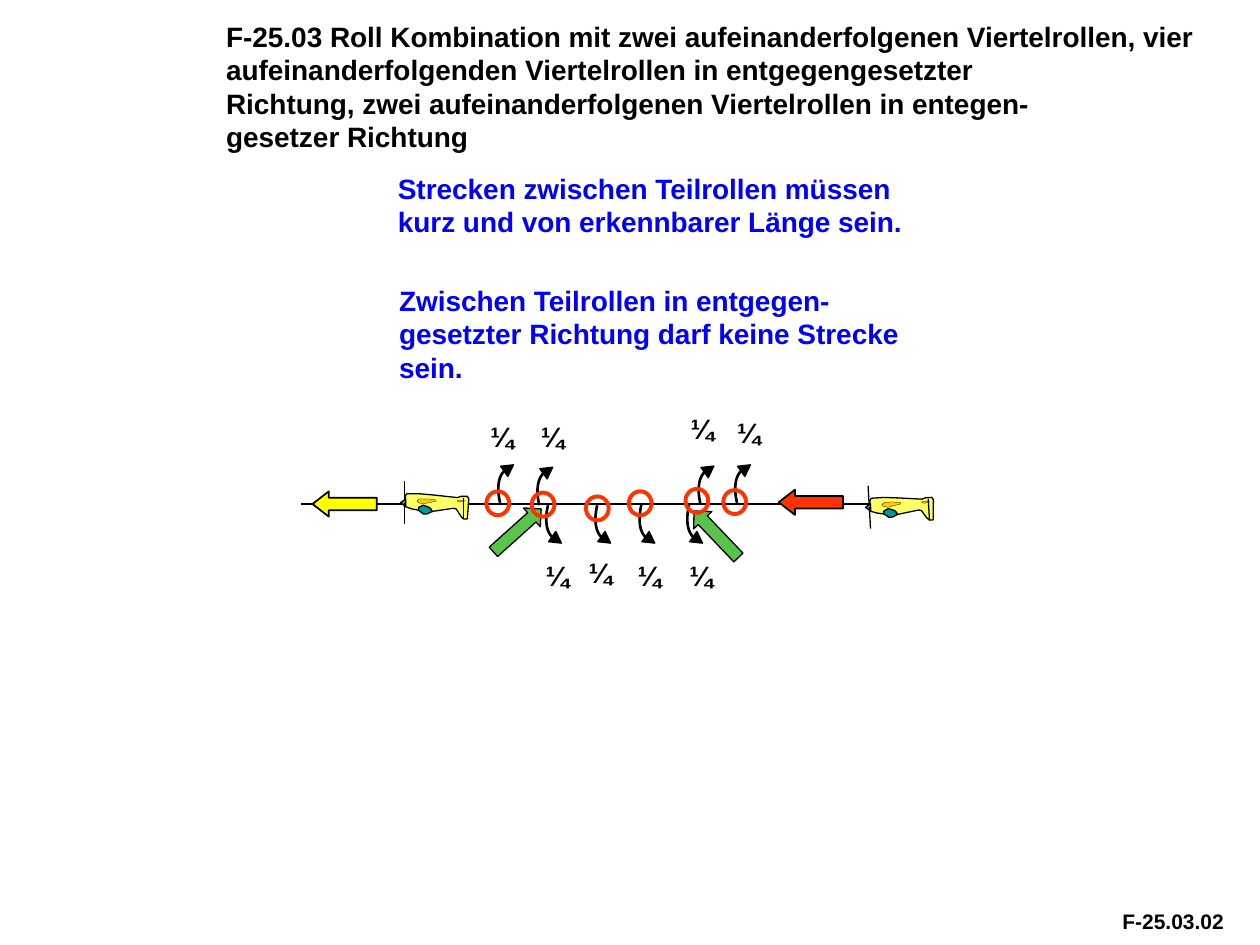
from math import cos, radians, sin

from lxml import etree
from pptx import Presentation
from pptx.dml.color import RGBColor
from pptx.enum.shapes import MSO_CONNECTOR, MSO_SHAPE
from pptx.enum.text import MSO_ANCHOR, MSO_AUTO_SIZE, PP_ALIGN
from pptx.oxml.ns import qn
from pptx.util import Pt

STRAIGHT = MSO_CONNECTOR.STRAIGHT
ARROW, OVAL, TRIANGLE = MSO_SHAPE.RIGHT_ARROW, MSO_SHAPE.OVAL, MSO_SHAPE.ISOSCELES_TRIANGLE
LEFT, CENTER = PP_ALIGN.LEFT, PP_ALIGN.CENTER
TOP = MSO_ANCHOR.TOP
NO_AUTOSIZE = MSO_AUTO_SIZE.NONE

COLORS = {
    "black": "000000", "blue": "0000FF", "red": "FF3300", "yellow": "FFFF00",
    "green": "59C34B", "gray": "808080", "fuselage": "FFFF66",
    "wing": "009999", "canopy": "FFCC00",
}

# Aircraft parts, measured from the middle of the fuselage
FUSELAGE = [
    (-10.4, 2.9), (-14, 2.2), (-18.4, 0.7), (-18.4, -2.2), (-17.6, -5.8),
    (-16.9, -6.5), (-9.7, -6.5), (-1.8, -5.8), (11.9, -4.3), (14, -5),
    (17.6, -5), (18.4, -3.6), (17.6, 7.9), (15.5, 7.9), (14, 6.5),
    (11.2, 2.2), (9.7, 1.8), (-2.5, 3.6), (-3.2, 2.2), (-7.6, 0.7), (-9.7, 1.4),
]
WING = [(-2.5, 3.6), (-4, 1.4), (-7.6, 0), (-10.4, 1.4), (-10.4, 2.9), (-7.6, 5), (-5.4, 5)]
CANOPY = [(-0.4, -2.9), (-0.4, -2.2), (-4.7, -1.4), (-7.6, -0.7), (-10.4, -1.4),
          (-11.2, -2.5), (-9.7, -3.6), (-4.7, -3.6)]
TAILPLANE = [(16.2, -2.5), (14, -2.9), (11.9, -2.9), (11.9, -2.2), (13.3, -1.8)]
UPPER_BLADE = [(-18.4, -13.7), (-18.4, -2.2)]
LOWER_BLADE = [(-18.4, -1.4), (-18.4, 10.8)]
RUDDER_HINGE = [(15.5, -4.3), (15.5, 7.9)]
SPINNER = (-19.1, -1.4)

# Roll arrow: start, two control points and end of the curve
ROLL_CURVE = [(0, 0), (-2.2, 9.4), (-0.7, 15.8), (2.9, 18.7)]
ROLL_HEAD = (5, 19.8)


class Figure:
    font = "Arial"

    def __init__(self, slide):
        self.slide = slide
        self.shapes = slide.shapes

    def color(self, name):
        return RGBColor.from_string(COLORS[name])

    def paint(self, shape, fill, line="black", width=0.75):
        shape.shadow.inherit = False
        if fill:
            shape.fill.solid()
            shape.fill.fore_color.rgb = self.color(fill)
        else:
            shape.fill.background()
        shape.line.color.rgb = self.color(line)
        shape.line.width = Pt(width)

    def fill_frame(self, frame, text, size, color, align):
        frame.word_wrap = True
        frame.auto_size = NO_AUTOSIZE
        frame.vertical_anchor = TOP
        frame.text = text
        paragraph = frame.paragraphs[0]
        paragraph.alignment = align
        font = paragraph.font
        font.name, font.size, font.bold = self.font, Pt(size), True
        font.color.rgb = self.color(color)

    def title(self, lines, left, top, width, height, indent):
        title = self.shapes.title
        title.left, title.top, title.width, title.height = map(Pt, (left, top, width, height))
        frame = title.text_frame
        self.fill_frame(frame, "\v".join(lines), 16, "black", LEFT)
        frame.margin_left, frame.margin_right = Pt(indent), Pt(6.5)
        frame.margin_top = frame.margin_bottom = Pt(3)

    def text(self, text, left, top, width, height, size=16, color="black", align=LEFT):
        box = self.shapes.add_textbox(Pt(left), Pt(top), Pt(width), Pt(height))
        self.fill_frame(box.text_frame, text, size, color, align)

    def line(self, start, end):
        line = self.shapes.add_connector(STRAIGHT, *map(Pt, (*start, *end)))
        line.line.color.rgb = self.color("black")
        line.line.width = Pt(0.75)
        etree.SubElement(line._element.spPr, qn("a:effectLst"))

    def preset(self, kind, center, width, height, fill, rotation=0, line="black", weight=0.75):
        x, y = center
        shape = self.shapes.add_shape(
            kind, Pt(x - width / 2), Pt(y - height / 2), Pt(width), Pt(height))
        shape.rotation = rotation
        self.paint(shape, fill, line, weight)
        return shape

    def arrow(self, center, fill, rotation, head=0.5, weight=0.75):
        arrow = self.preset(ARROW, center, 36.7, 14.4, fill, rotation, weight=weight)
        arrow.adjustments[1] = head

    def outline(self, points, fill, width=0.75, close=True):
        start, *others = [(Pt(x), Pt(y)) for x, y in points]
        builder = self.shapes.build_freeform(*start)
        builder.add_line_segments(others, close=close)
        shape = builder.convert_to_shape()
        self.paint(shape, fill, width=width)
        return shape

    def curve(self, points):
        """Draw one cubic curve through start, two controls and end."""
        shape = self.outline(points, None, 1.5, close=False)
        geometry = shape._element.spPr.find(".//" + qn("a:path"))
        bezier = etree.SubElement(geometry, qn("a:cubicBezTo"))
        for segment in geometry.findall(qn("a:lnTo")):
            bezier.append(segment[0])
            geometry.remove(segment)

    def roll(self, x, y, direction):
        """Draw a quarter-roll arrow; direction is -1 for up, 1 for down."""
        self.curve([(x + dx, y + direction * dy) for dx, dy in ROLL_CURVE])
        head = x + ROLL_HEAD[0], y + direction * ROLL_HEAD[1]
        self.preset(TRIANGLE, head, 7.2, 6.5, "black", 54.5 if direction < 0 else 125.5)

    def aircraft(self, x, y, angle):
        cosine, sine = cos(radians(angle)), sin(radians(angle))

        def place(points):
            return [(x + dx * cosine - dy * sine, y + dx * sine + dy * cosine)
                    for dx, dy in points]

        self.line(*place(UPPER_BLADE))
        self.outline(place(FUSELAGE), "fuselage")
        self.outline(place(WING), "wing")
        for part in (CANOPY, TAILPLANE):
            self.outline(place(part), "canopy", 0.13)
        self.line(*place(RUDDER_HINGE))
        self.preset(TRIANGLE, place([SPINNER])[0], 4.3, 2.9, "gray", 270 + angle)
        self.line(*place(LOWER_BLADE))


def main():
    presentation = Presentation()
    presentation.slide_width, presentation.slide_height = Pt(720), Pt(540)
    figure = Figure(presentation.slides.add_slide(presentation.slide_layouts[5]))

    figure.title([
        "F-25.03 Roll Kombination mit zwei aufeinanderfolgenen Viertelrollen, vier",
        "aufeinanderfolgenden Viertelrollen in entgegengesetzter",
        "Richtung, zwei aufeinanderfolgenen Viertelrollen in entegen-",
        "gesetzer Richtung",
    ], 80.6, 7.9, 621.4, 83.5, 48.6)
    figure.text("F-25.03.02", 634.3, 515.5, 74.2, 21.6, size=12)
    figure.text("Strecken zwischen Teilrollen müssen kurz und von erkennbarer Länge sein.",
                220.3, 94.3, 326.9, 46.1, color="blue")
    figure.text("Zwischen Teilrollen in entgegen-gesetzter Richtung darf keine Strecke sein.",
                221, 158.4, 319, 65.5, color="blue")

    figure.line((512.6, 288), (172, 288))
    figure.aircraft(515.2, 290.2, -3.3)
    figure.aircraft(249.5, 288.7, 0)
    figure.arrow((463.3, 287), "red", 180, 0.645, 1)
    figure.arrow((196.9, 288), "yellow", 180, 0.645, 1)

    for x, y in [(285.8, 287.3), (308.2, 288.7), (400.3, 288), (421.2, 287.3)]:
        figure.roll(x, y, -1)
    for x in (313.2, 341.3, 366.5, 393.8):
        figure.roll(x, 288.7, 1)

    for left, top in [(243.4, 236.2), (272.2, 236.2), (357.8, 231.8), (384.5, 234),
                      (275, 315.4), (299.5, 313.9), (327.6, 315.4), (357.1, 315.4)]:
        figure.text("¼ ", left, top, 91.4, 26.6, align=CENTER)

    figure.arrow((295.6, 303.1), "green", 318.1)
    figure.arrow((409.3, 305.3), "green", 226.3)
    for center in [(284.4, 287.6), (310.3, 288.4), (341.3, 290.5),
                   (365.8, 287.6), (398.2, 286.2), (419.8, 286.9)]:
        figure.preset(OVAL, center, 13, 13.7, None, line="red", weight=2.25)

    presentation.save("out.pptx")


if __name__ == "__main__":
    main()
